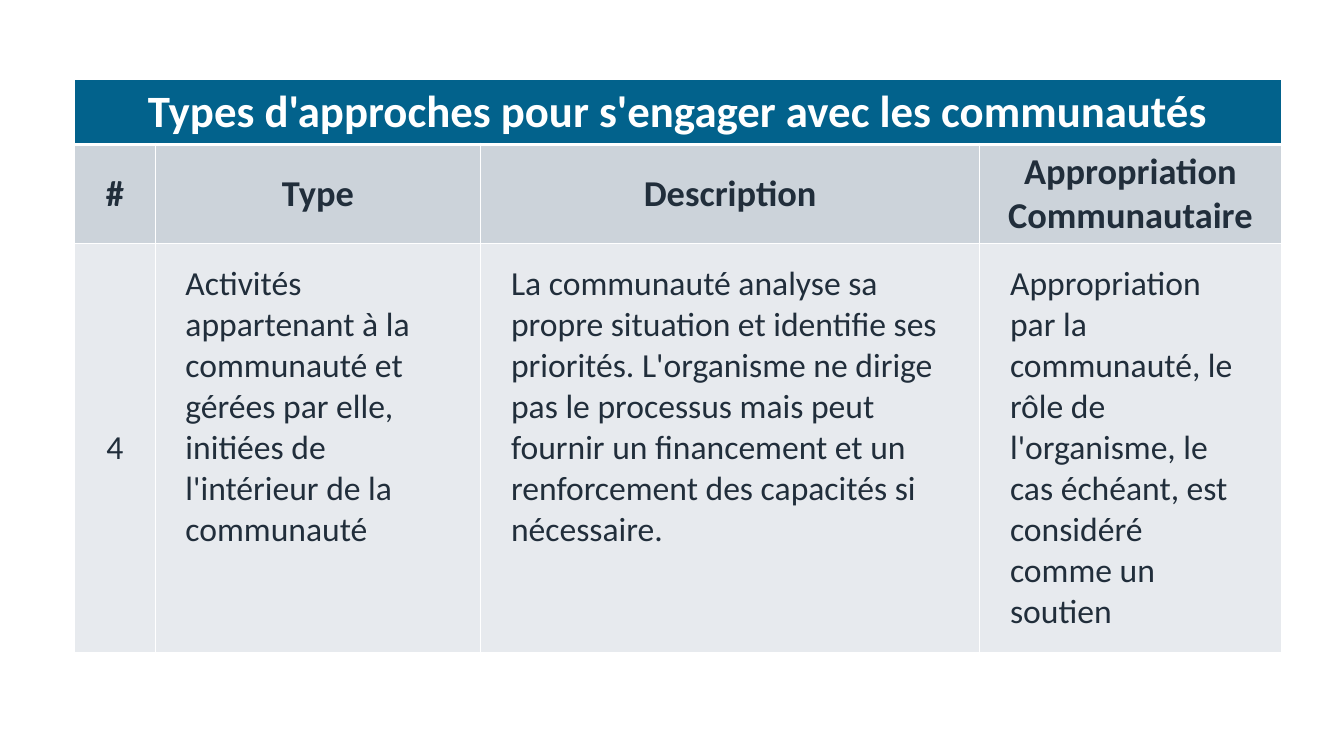
from dataclasses import dataclass

from lxml.etree import SubElement
from pptx import Presentation
from pptx.dml.color import RGBColor
from pptx.enum.text import MSO_ANCHOR as Anchor, PP_ALIGN as Align
from pptx.oxml.ns import qn
from pptx.util import Inches, Pt


@dataclass(frozen=True)
class Theme:
    font: str = "Calibri"
    white: str = "FFFFFF"
    ink: str = "212E3B"
    title_fill: str = "02628C"
    heading_fill: str = "CCD3DA"
    body_fill: str = "E7EAEE"
    title_size: int = 32
    heading_size: int = 26
    body_size: int = 24
    rule: int = 1
    title_rule: int = 3


THEME = Theme()
SLIDE_WIDTH, SLIDE_HEIGHT = Inches(13.33), Inches(7.5)

# Percent of the slide's width and height
LEFT, TOP = 5.55, 10.53
COLUMNS = [6, 24.23, 37.13, 22.43]
ROWS = [8.4, 12.93, 54.13]

TITLE = "Types d'approches pour s'engager avec les communautés"
HEADINGS = ["#", "Type", "Description", "Appropriation Communautaire"]
NUMBER = "4"
APPROACH = [
    "Activités appartenant à la communauté et gérées par elle, "
    "initiées de l'intérieur de la communauté",
    "La communauté analyse sa propre situation et identifie ses priorités. "
    "L'organisme ne dirige pas le processus mais peut fournir un financement "
    "et un renforcement des capacités si nécessaire.",
    "Appropriation par la communauté, le rôle de l'organisme, "
    "le cas échéant, est considéré comme un soutien",
]


def across(percent):
    return int(SLIDE_WIDTH * percent / 100)


def down(percent):
    return int(SLIDE_HEIGHT * percent / 100)


def write(cell, text, size, color=THEME.ink, bold=False, align=Align.CENTER,
          anchor=Anchor.MIDDLE):
    cell.vertical_anchor = anchor
    paragraph = cell.text_frame.paragraphs[0]
    paragraph.alignment = align
    run = paragraph.add_run()
    run.text = text
    run.font.name = THEME.font
    run.font.size = Pt(size)
    run.font.bold = bold
    run.font.color.rgb = RGBColor.from_string(color)


def pad(cell, sides, ends):
    cell.margin_left = cell.margin_right = Inches(sides)
    cell.margin_top = cell.margin_bottom = Inches(ends)


def paint(cell, fill, top=THEME.rule, bottom=THEME.rule):
    """Rule the four edges in white, then fill the cell."""
    properties = cell._tc.get_or_add_tcPr()
    edges = {"L": THEME.rule, "R": THEME.rule, "T": top, "B": bottom}
    for edge, width in edges.items():
        line = SubElement(properties, qn(f"a:ln{edge}"), w=str(Pt(width)))
        solid = SubElement(line, qn("a:solidFill"))
        SubElement(solid, qn("a:srgbClr"), val=THEME.white)
    cell.fill.solid()
    cell.fill.fore_color.rgb = RGBColor.from_string(fill)


def add_grid(slide):
    table = slide.shapes.add_table(
        len(ROWS), len(COLUMNS), across(LEFT), down(TOP),
        across(sum(COLUMNS)), down(sum(ROWS))).table
    for column, share in zip(table.columns, COLUMNS):
        column.width = across(share)
    for row, share in zip(table.rows, ROWS):
        row.height = down(share)
    return table


def fill_title(table):
    title_cells = list(table.rows[0].cells)
    for cell in title_cells:
        paint(cell, THEME.title_fill, bottom=THEME.title_rule)
    title_cells[0].merge(title_cells[-1])
    write(title_cells[0], TITLE, THEME.title_size, color=THEME.white,
          bold=True, anchor=Anchor.TOP)


def fill_headings(table):
    for cell, heading in zip(table.rows[1].cells, HEADINGS):
        paint(cell, THEME.heading_fill, top=THEME.title_rule)
        write(cell, heading, THEME.heading_size, bold=True)


def fill_approach(table):
    number_cell, *detail_cells = table.rows[2].cells
    paint(number_cell, THEME.body_fill)
    write(number_cell, NUMBER, THEME.body_size)
    for cell, detail in zip(detail_cells, APPROACH):
        paint(cell, THEME.body_fill)
        pad(cell, sides=0.3, ends=0.2)
        write(cell, detail, THEME.body_size, align=Align.LEFT,
              anchor=Anchor.TOP)


def main():
    deck = Presentation()
    deck.slide_width, deck.slide_height = SLIDE_WIDTH, SLIDE_HEIGHT
    slide = deck.slides.add_slide(deck.slide_layouts[6])
    table = add_grid(slide)
    fill_title(table)
    fill_headings(table)
    fill_approach(table)
    deck.save("out.pptx")


if __name__ == "__main__":
    main()
